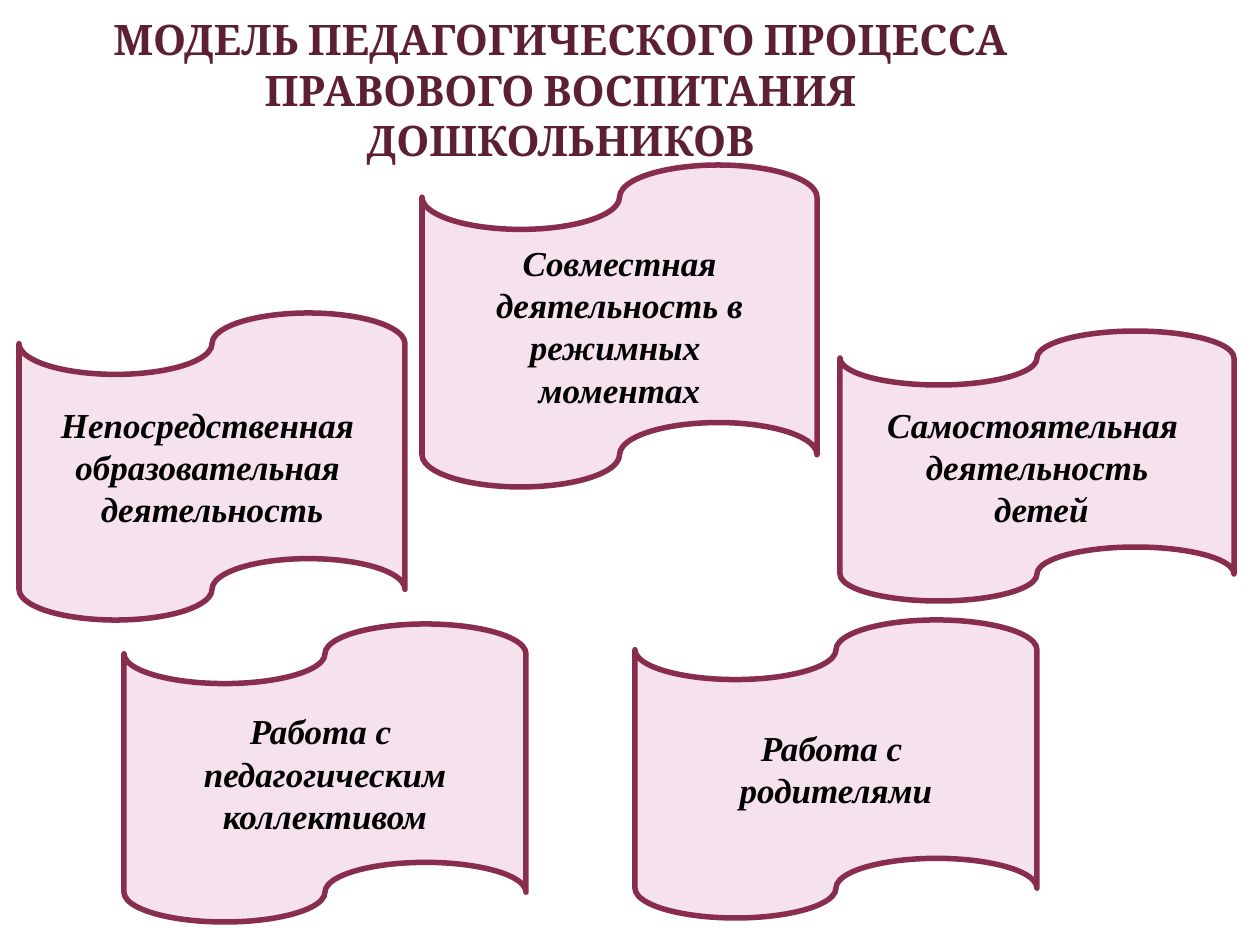
from dataclasses import dataclass

from pptx import Presentation
from pptx.dml.color import RGBColor as RGB
from pptx.enum.shapes import MSO_SHAPE as Form
from pptx.enum.text import MSO_ANCHOR as Anchor, PP_ALIGN as Align
from pptx.util import Pt


@dataclass(frozen=True)
class Theme:
    """Colours, fonts and type sizes of the slide."""
    fill: str = "F5E2ED"
    edge: str = "882D4D"
    ink: str = "000000"
    head: str = "5C1F34"
    serif: str = "Times New Roman"
    title: str = "Cambria"
    body: int = 20
    large: int = 24
    line: float = 3.15


THEME = Theme()
TITLE = "МОДЕЛЬ ПЕДАГОГИЧЕСКОГО ПРОЦЕССА ПРАВОВОГО ВОСПИТАНИЯ\vДОШКОЛЬНИКОВ"
TAPES = [
    ((840, 331, 394, 270), ["Самостоятельная ", "деятельность", " детей"]),
    ((124, 624, 402, 298), ["Работа с ", "педагогическим коллективом"]),
    ((19, 313, 386, 307), ["Непосредственная ", "образовательная ", "деятельность"]),
    ((422, 165, 395, 322), ["Совместная деятельность в режимных ", "моментах"]),
    ((635, 620, 402, 298), ["Работа с ", "родителями"]),
]


def px(num):
    """Turn pixels into EMU."""
    return round(num * 914400 / 126)


def write(frame, lines, name, size, hue, slant=False):
    """Fill a text frame with centred bold paragraphs."""
    frame.word_wrap = True
    for i, line in enumerate(lines):
        para = frame.add_paragraph() if i else frame.paragraphs[0]
        para.alignment = Align.CENTER
        parts = line.split("\v")
        for j, part in enumerate(parts):
            if j:
                para.add_line_break()
            run = para.add_run()
            run.text = part
            font = run.font
            font.name, font.size = name, Pt(size)
            font.bold, font.italic = True, slant
            font.color.rgb = RGB.from_string(hue)


def add_title(slide, box, text):
    """Add the heading, resting on the bottom of its box."""
    frame = slide.shapes.add_textbox(*map(px, box)).text_frame
    frame.vertical_anchor = Anchor.BOTTOM
    frame.margin_left = frame.margin_right = px(6)
    frame.margin_top = frame.margin_bottom = 0
    write(frame, [text], THEME.title, THEME.large, THEME.head)


def add_tape(slide, box, lines):
    """Add one wavy panel with its label."""
    tape = slide.shapes.add_shape(Form.FLOWCHART_PUNCHED_TAPE, *map(px, box))
    tape.shadow.inherit = False
    tape.fill.solid()
    tape.fill.fore_color.rgb = RGB.from_string(THEME.fill)
    tape.line.color.rgb = RGB.from_string(THEME.edge)
    tape.line.width = Pt(THEME.line)
    tape.text_frame.vertical_anchor = Anchor.MIDDLE
    write(tape.text_frame, lines, THEME.serif, THEME.body, THEME.ink, True)


def main():
    """Build and save the slide."""
    deck = Presentation()
    deck.slide_width, deck.slide_height = px(1260), px(945)
    slide = deck.slides.add_slide(deck.slide_layouts[6])
    add_title(slide, (15, 16, 1091, 149), TITLE)
    for box, lines in TAPES:
        add_tape(slide, box, lines)
    deck.save("out.pptx")


if __name__ == "__main__":
    main()
